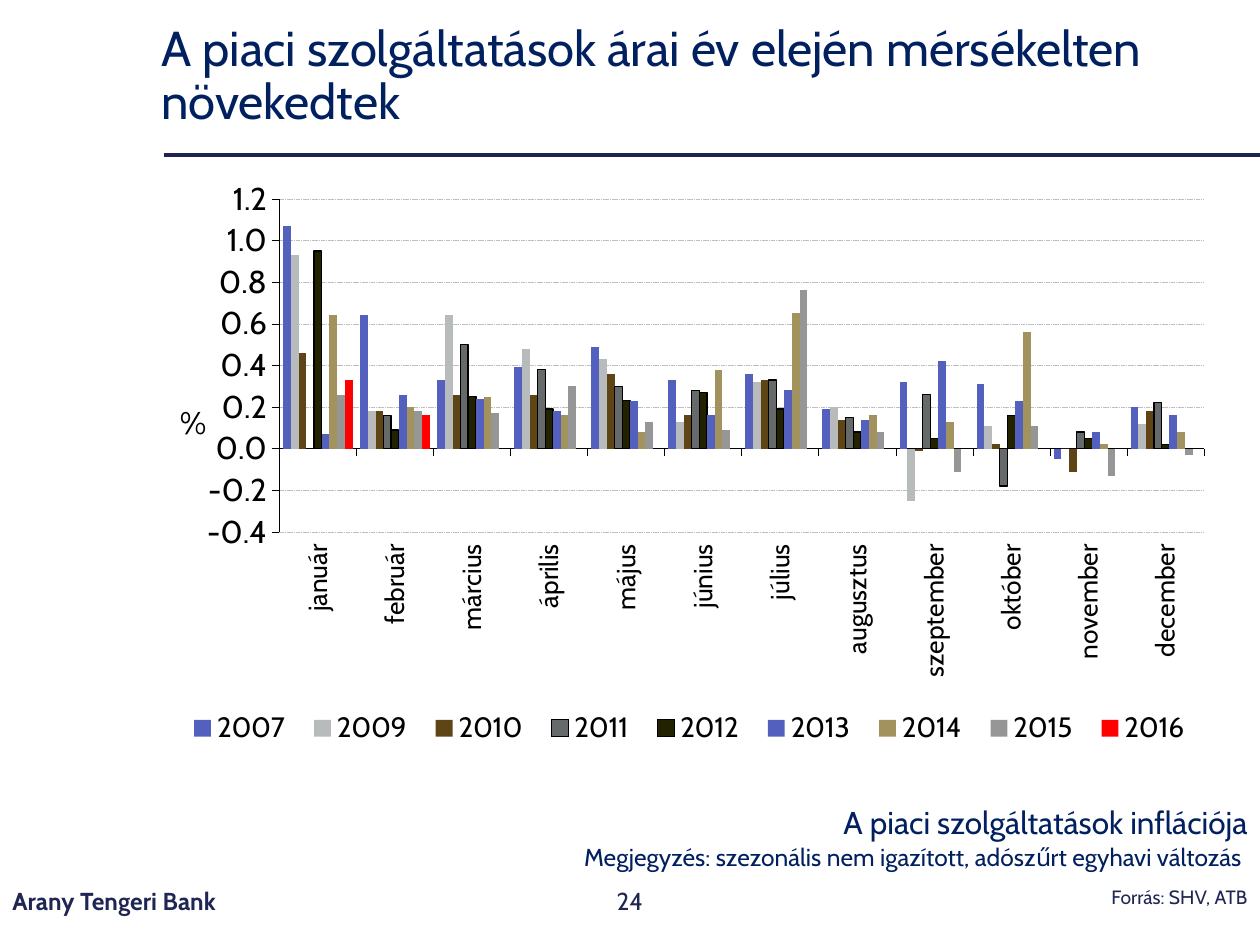
import lxml.etree
import pptx
import pptx.chart.data
import pptx.dml.color
import pptx.enum.chart
import pptx.enum.dml
import pptx.enum.shapes
import pptx.enum.text
import pptx.oxml
import pptx.oxml.ns
import pptx.util

WIDTH, HEIGHT = 10, 7.5
FONT = "Cabin"
COLORS = {"title": "002060", "footer": "202653", "rule": "1E2452",
          "ink": "000000", "grid": "BFBFBF"}
ALIGN = pptx.enum.text.PP_ALIGN
MIDDLE = pptx.enum.text.MSO_ANCHOR.MIDDLE

MONTHS = ["január", "február", "március", "április", "május", "június", "július",
          "augusztus", "szeptember", "október", "november", "december"]
# Year: (fill, outlined, monthly change in %)
YEARS = {
    "2007": ("5460BD", False, [1.07, 0.64, 0.33, 0.39, 0.49, 0.33, 0.36, 0.19, 0.32, 0.31, -0.05, 0.2]),
    "2009": ("B8BBBB", False, [0.93, 0.18, 0.64, 0.48, 0.43, 0.13, 0.32, 0.2, -0.25, 0.11, 0, 0.12]),
    "2010": ("5F4516", False, [0.46, 0.18, 0.26, 0.26, 0.36, 0.16, 0.33, 0.14, -0.01, 0.02, -0.11, 0.18]),
    "2011": ("666A6A", True, [0, 0.16, 0.5, 0.38, 0.3, 0.28, 0.33, 0.15, 0.26, -0.18, 0.08, 0.22]),
    "2012": ("232200", True, [0.95, 0.09, 0.25, 0.19, 0.23, 0.27, 0.19, 0.08, 0.05, 0.16, 0.05, 0.02]),
    "2013": ("5460BD", False, [0.07, 0.26, 0.24, 0.18, 0.23, 0.16, 0.28, 0.14, 0.42, 0.23, 0.08, 0.16]),
    "2014": ("A2935E", False, [0.64, 0.2, 0.25, 0.16, 0.08, 0.38, 0.65, 0.16, 0.13, 0.56, 0.02, 0.08]),
    "2015": ("969696", False, [0.26, 0.18, 0.17, 0.3, 0.13, 0.09, 0.76, 0.08, -0.11, 0.11, -0.13, -0.03]),
    "2016": ("FF0000", False, [0.33, 0.16] + [None] * 10),
}


def rgb(name):
    return pptx.dml.color.RGBColor.from_string(COLORS.get(name, name))


def inches(box):
    return [pptx.util.Inches(length) for length in box]


def style_font(font, size, color, bold=False):
    font.name, font.size, font.bold = FONT, pptx.util.Pt(size), bold
    font.color.rgb = rgb(color)


def style_line(line, color, width):
    line.color.rgb = rgb(color)
    line.width = pptx.util.Pt(width)


def write(paragraph, text, size, color, align=ALIGN.LEFT, spacing=1.0, bold=False):
    paragraph.alignment = align
    paragraph.line_spacing = spacing
    run = paragraph.add_run()
    run.text = text
    style_font(run.font, size, color, bold)


def add_text_frame(slide, box, anchor):
    frame = slide.shapes.add_textbox(*inches(box)).text_frame
    frame.word_wrap = True
    frame.vertical_anchor = anchor
    return frame


def add_heading(slide, box):
    """Title with the rule that runs below it to the right edge."""
    left, top, width, height = box
    title = slide.shapes.title
    title.left, title.top, title.width, title.height = inches(box)
    title.text_frame.vertical_anchor = MIDDLE
    title.text_frame.auto_size = pptx.enum.text.MSO_AUTO_SIZE.NONE
    write(title.text_frame.paragraphs[0],
          "A piaci szolgáltatások árai év elején mérsékelten növekedtek",
          28, "title", spacing=0.9)
    rule_y = top + height + 0.2
    rule = slide.shapes.add_connector(
        pptx.enum.shapes.MSO_CONNECTOR.STRAIGHT,
        *inches([left + 0.12, rule_y, WIDTH, rule_y]))
    style_line(rule.line, "rule", 2.25)
    lxml.etree.SubElement(rule._element.spPr, pptx.oxml.ns.qn("a:effectLst"))


def set_layout(part, index, inner=False, **shares):
    """Place a chart part by shares of the chart's size."""
    for old in part.findall(pptx.oxml.ns.qn("c:layout")):
        part.remove(old)
    target = '<c:layoutTarget val="inner"/>' if inner else ""
    modes = "".join(f'<c:{key}Mode val="edge"/>' for key in "xy")
    values = "".join(f'<c:{key} val="{share}"/>' for key, share in shares.items())
    part.insert(index, pptx.oxml.parse_xml(
        f'<c:layout {pptx.oxml.ns.nsdecls("c")}><c:manualLayout>'
        f'{target}{modes}{values}</c:manualLayout></c:layout>'))


def format_axes(chart):
    tick = pptx.enum.chart.XL_TICK_MARK
    months, change = chart.category_axis, chart.value_axis
    for axis in (months, change):
        axis.major_tick_mark, axis.minor_tick_mark = tick.OUTSIDE, tick.NONE
        style_line(axis.format.line, "ink", 0.25)
    months.tick_label_position = pptx.enum.chart.XL_TICK_LABEL_POSITION.LOW
    style_font(months.tick_labels.font, 15, "ink")
    turned = months._element.find(pptx.oxml.ns.qn("c:txPr")).find(pptx.oxml.ns.qn("a:bodyPr"))
    turned.set("rot", "-5400000")
    turned.set("vert", "horz")

    change.minimum_scale, change.maximum_scale, change.major_unit = -0.4, 1.2, 0.2
    change.tick_labels.number_format = "0.0"
    change.tick_labels.number_format_is_linked = False
    style_font(change.tick_labels.font, 18, "ink")
    grid = change.major_gridlines.format.line
    style_line(grid, "grid", 0.25)
    grid.dash_style = pptx.enum.dml.MSO_LINE.SQUARE_DOT
    unit = change.axis_title.text_frame
    write(unit.paragraphs[0], "%", 18, "ink")
    unit._txBody.bodyPr.set("rot", "0")
    set_layout(change.axis_title._element, 1, x=0.01, y=0.37)


def add_price_chart(slide, box):
    data = pptx.chart.data.CategoryChartData()
    data.categories = MONTHS
    for year, (_, _, changes) in YEARS.items():
        data.add_series(year, changes)
    chart = slide.shapes.add_chart(
        pptx.enum.chart.XL_CHART_TYPE.COLUMN_CLUSTERED, *inches(box), data).chart
    chart.has_title = False
    style_font(chart.font, 18, "ink")

    # Columns
    plot = chart.plots[0]
    plot.gap_width, plot.overlap, plot.vary_by_categories = 97, 0, False
    for series, (fill, outlined, _) in zip(plot.series, YEARS.values()):
        series.invert_if_negative = False
        series.format.fill.solid()
        series.format.fill.fore_color.rgb = rgb(fill)
        if outlined:
            style_line(series.format.line, "ink", 0.75)
        else:
            series.format.line.fill.background()
    format_axes(chart)
    set_layout(chart._chartSpace.chart.plotArea, 0, inner=True,
               x=0.11, y=0.04, w=0.88, h=0.56)

    # Legend
    chart.has_legend = True
    chart.legend.position = pptx.enum.chart.XL_LEGEND_POSITION.BOTTOM
    chart.legend.include_in_layout = False
    style_font(chart.legend.font, 16, "ink")
    set_layout(chart.legend._element, 1, x=0.01, y=0.88, w=0.98, h=0.1)


def add_caption(slide, box):
    caption = add_text_frame(slide, box, pptx.enum.text.MSO_ANCHOR.TOP)
    write(caption.paragraphs[0], "A piaci szolgáltatások inflációja",
          18, "title", ALIGN.RIGHT, 1.07)
    write(caption.add_paragraph(),
          "Megjegyzés: szezonális nem igazított, adószűrt egyhavi változás ",
          14, "title", ALIGN.RIGHT, 1.07)


def add_footer(slide, box):
    """Bank, page number and source, side by side."""
    left, top, width, height = box
    parts = [(0, 0.34, 0, "Arany Tengeri Bank", 14, ALIGN.LEFT, True),
             (0.39, 0.22, 0, "24", 14, ALIGN.CENTER, False),
             (0.72, 0.28, -0.03, "Forrás: SHV, ATB", 11, ALIGN.RIGHT, False)]
    for start, share, shift, text, size, align, bold in parts:
        frame = add_text_frame(
            slide, (left + start * width, top + shift, share * width, height), MIDDLE)
        write(frame.paragraphs[0], text, size, "footer", align, bold=bold)


def main():
    deck = pptx.Presentation()
    deck.slide_width, deck.slide_height = inches((WIDTH, HEIGHT))
    slide = deck.slides.add_slide(deck.slide_layouts.get_by_name("Title Only"))
    add_heading(slide, (1.18, 0.2, 8.19, 0.83))
    add_price_chart(slide, (1.3, 1.39, 8.34, 4.72))
    add_caption(slide, (1.14, 6.3, 8.86, 0.66))
    add_footer(slide, (0, 6.95, WIDTH, 0.4))
    deck.save("out.pptx")


if __name__ == "__main__":
    main()
